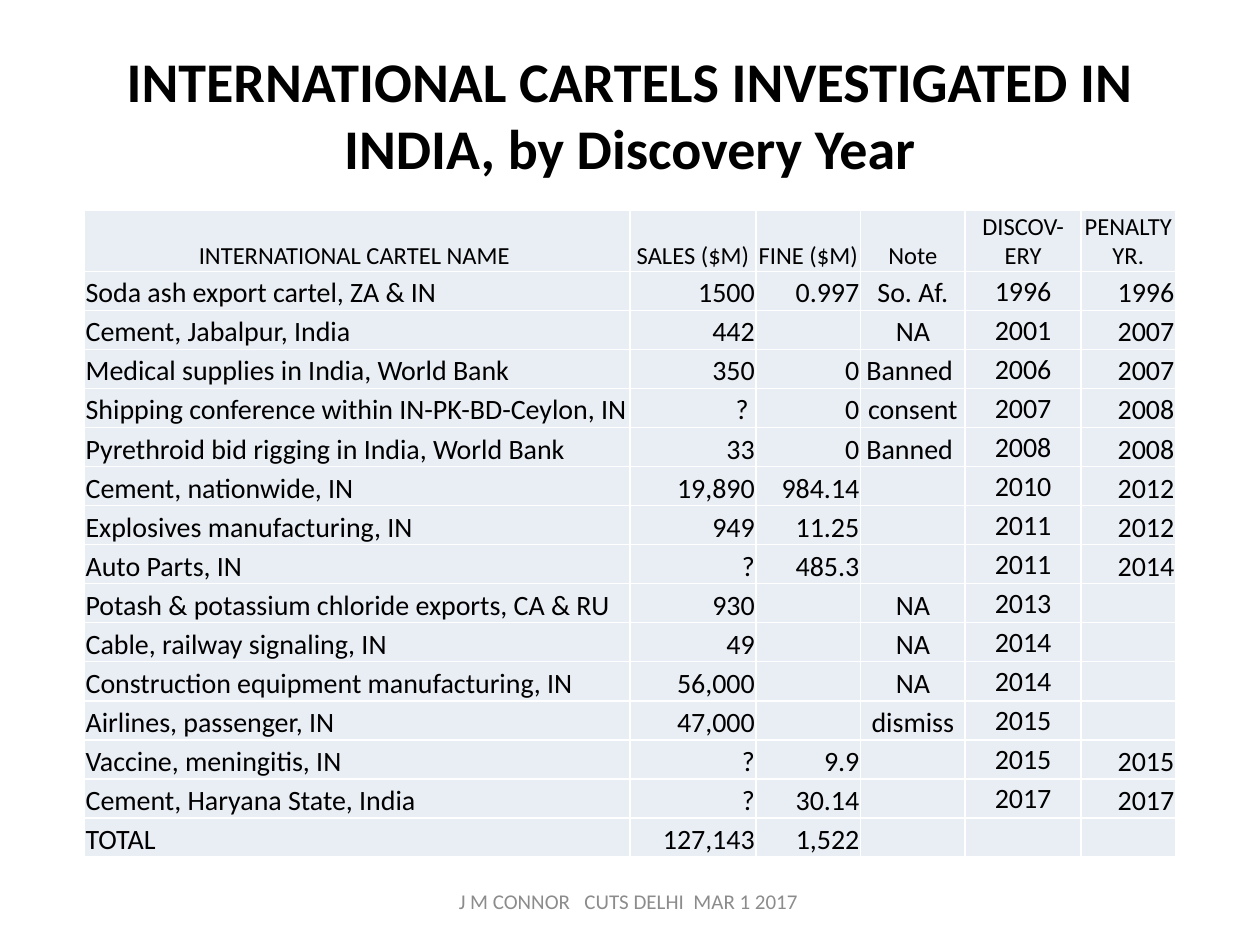
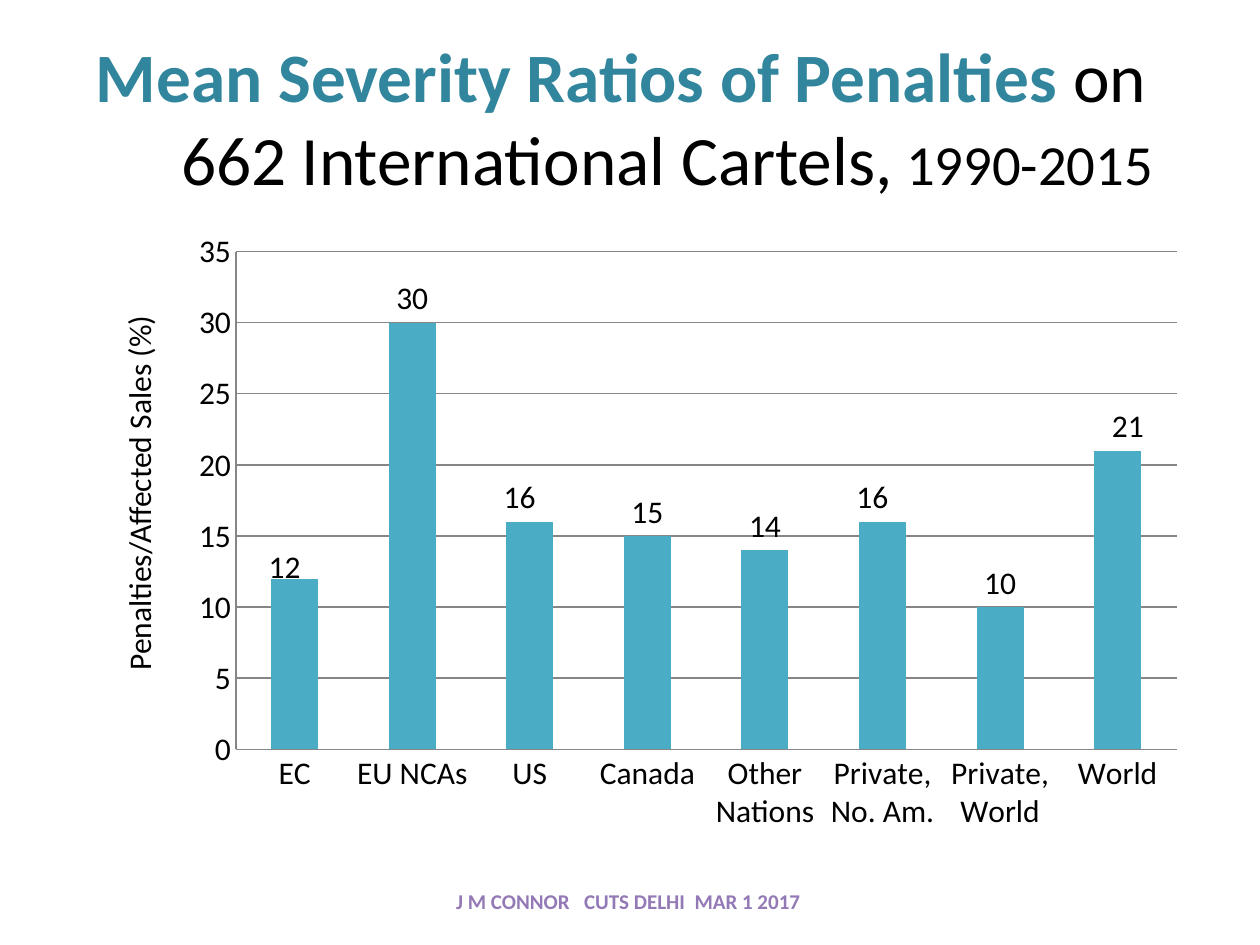
from dataclasses import dataclass

import pptx
import pptx.chart.data
import pptx.dml.color
import pptx.enum.chart
import pptx.enum.text
import pptx.oxml
import pptx.oxml.ns
import pptx.util
from lxml import etree

Inches = pptx.util.Inches
Pt = pptx.util.Pt
qn = pptx.oxml.ns.qn
ALIGN = pptx.enum.text.PP_ALIGN
ANCHOR = pptx.enum.text.MSO_ANCHOR

FONT = "Calibri"
COLORS = {
    "text": "000000",
    "cell": "E9EDF4",
    "border": "FFFFFF",
    "footer": "8C8C8C",
    "accent_footer": "9379B5",
    "highlight": "31859C",
    "bar": "4BACC6",
    "grid": "868686",
}


@dataclass(frozen=True)
class Run:
    text: str
    size: float
    color: str = "text"
    bold: bool = False
    spacing: float = 0


@dataclass(frozen=True)
class Box:
    left: float
    top: float
    width: float
    height: float

    def emu(self) -> tuple:
        return tuple(Inches(v) for v in (self.left, self.top, self.width, self.height))


@dataclass(frozen=True)
class Column:
    heading: str
    width: float
    align: ALIGN
    anchor: ANCHOR = ANCHOR.BOTTOM


@dataclass(frozen=True)
class Cartel:
    name: str
    sales: str
    fine: str = ""
    note: str = ""
    discovered: str = ""
    penalized: str = ""

    def values(self) -> tuple:
        return (self.name, self.sales, self.fine, self.note,
                self.discovered, self.penalized)


COLUMNS = [
    Column("INTERNATIONAL CARTEL NAME ", 4.33, ALIGN.LEFT),
    Column("SALES ($M)", 1, ALIGN.RIGHT),
    Column("FINE ($M)", 0.83, ALIGN.RIGHT),
    Column("Note", 0.83, ALIGN.CENTER),
    Column("DISCOV- ERY", 0.92, ALIGN.CENTER, ANCHOR.MIDDLE),
    Column("PENALTY YR.", 0.75, ALIGN.RIGHT),
]
CARTELS = [
    Cartel("Soda ash export cartel, ZA & IN", "1500", "0.997", "So. Af.", "1996", "1996"),
    Cartel("Cement, Jabalpur, India", "442", "", "NA", "2001", "2007"),
    Cartel("Medical supplies in India, World Bank", "350", "0", "Banned ", "2006", "2007"),
    Cartel("Shipping conference within IN-PK-BD-Ceylon, IN", "? ", "0", "consent",
           "2007", "2008"),
    Cartel("Pyrethroid bid rigging in India, World Bank", "33", "0", "Banned ",
           "2008", "2008"),
    Cartel("Cement, nationwide, IN", "19,890", "984.14", "", "2010", "2012"),
    Cartel("Explosives manufacturing, IN", "949", "11.25", "", "2011", "2012"),
    Cartel("Auto Parts, IN", "?", "485.3", "", "2011", "2014"),
    Cartel("Potash & potassium chloride exports, CA & RU", "930", "", "NA", "2013"),
    Cartel("Cable, railway signaling, IN", "49", "", "NA", "2014"),
    Cartel("Construction equipment manufacturing, IN", "56,000", "", "NA", "2014"),
    Cartel("Airlines, passenger, IN", "47,000", "", "dismiss", "2015"),
    Cartel("Vaccine, meningitis, IN", "?", "9.9", "", "2015", "2015"),
    Cartel("Cement, Haryana State, India", "?", "30.14", "", "2017", "2017"),
    Cartel("TOTAL", "127,143", "1,522"),
]
SEVERITY = {
    "EC": 12, "EU NCAs": 30, "US": 16, "Canada": 15, "Other Nations": 14,
    "Private, No. Am.": 16, "Private, World": 10, "World": 21,
}
# Label shifts as fractions of the chart's width and height
LABEL_SHIFTS = {0: (-0.01, 0.02), 2: (-0.01, 0), 5: (-0.01, 0), 7: (0.01, 0)}


def rgb(name: str) -> pptx.dml.color.RGBColor:
    return pptx.dml.color.RGBColor.from_string(COLORS[name])


def write(paragraph, runs: list[Run], align: ALIGN) -> None:
    paragraph.alignment = align
    for part in runs:
        run = paragraph.add_run()
        run.text = part.text
        run.font.name = FONT
        run.font.size = Pt(part.size)
        run.font.bold = part.bold
        run.font.color.rgb = rgb(part.color)
        if part.spacing:
            run.font._element.set("spc", str(int(part.spacing * 100)))


def add_title(slide, height: float, lines: list[list[Run]]):
    title = slide.shapes.title
    title.left, title.top, title.width, title.height = Box(0.5, 0.3, 9, height).emu()
    frame = title.text_frame
    frame.auto_size = pptx.enum.text.MSO_AUTO_SIZE.NONE
    frame.vertical_anchor = ANCHOR.MIDDLE
    for i, runs in enumerate(lines):
        paragraph = frame.add_paragraph() if i else frame.paragraphs[0]
        paragraph.space_before = Pt(0)
        write(paragraph, runs, ALIGN.CENTER)
    return frame


def add_text(slide, box: Box, runs: list[Run], align: ALIGN, anchor: ANCHOR):
    label = slide.shapes.add_textbox(*box.emu())
    label.text_frame.word_wrap = True
    label.text_frame.vertical_anchor = anchor
    write(label.text_frame.paragraphs[0], runs, align)
    return label


def add_footer(slide, color: str, bold: bool = False) -> None:
    pieces = [("J M CONNOR", 0), (" ", 5.4), ("CUTS DELHI", 0), (" ", 2.7),
              ("MAR 1 2017 ", 0)]
    runs = [Run(text, 12, color, bold, spacing) for text, spacing in pieces]
    add_text(slide, Box(3.42, 6.95, 3.17, 0.4), runs, ALIGN.CENTER, ANCHOR.MIDDLE)


def fill_cell(cell, text: str, size: float, align: ALIGN, anchor: ANCHOR) -> None:
    cell.margin_left = cell.margin_right = cell.margin_top = Inches(0.01)
    cell.margin_bottom = 0
    cell.vertical_anchor = anchor
    paragraph = cell.text_frame.paragraphs[0]
    if text:
        write(paragraph, [Run(text, size)], align)
    else:
        etree.SubElement(paragraph._p, qn("a:endParaRPr"), sz=str(int(size * 100)))
    # Borders come before the fill in the cell properties
    properties = cell._tc.get_or_add_tcPr()
    for side in ("lnL", "lnR", "lnT", "lnB"):
        line = etree.SubElement(properties, qn(f"a:{side}"), w=str(Pt(1)))
        solid = etree.SubElement(line, qn("a:solidFill"))
        etree.SubElement(solid, qn("a:srgbClr"), val=COLORS["border"])
    cell.fill.solid()
    cell.fill.fore_color.rgb = rgb("cell")


def add_cartel_table(slide) -> None:
    table = slide.shapes.add_table(
        len(CARTELS) + 1, len(COLUMNS), *Box(0.67, 1.67, 8.66, 5.16).emu()).table
    table.first_row = table.horz_banding = False
    for row in table.rows:
        row.height = Inches(0.31)
    table.rows[0].height = Inches(0.48)
    for c, column in enumerate(COLUMNS):
        table.columns[c].width = Inches(column.width)
        fill_cell(table.cell(0, c), column.heading, 14, ALIGN.CENTER, ANCHOR.BOTTOM)
        for r, cartel in enumerate(CARTELS, 1):
            fill_cell(table.cell(r, c), cartel.values()[c], 16, column.align, column.anchor)


def manual_layout(**settings) -> etree._Element:
    layout = pptx.oxml.parse_xml(
        f'<c:layout xmlns:c="{pptx.oxml.ns.nsuri("c")}"><c:manualLayout/></c:layout>')
    for key, value in settings.items():
        etree.SubElement(layout[0], qn(f"c:{key}"), val=str(value))
    return layout


def add_severity_chart(slide) -> None:
    data = pptx.chart.data.CategoryChartData(number_format="0")
    data.categories = list(SEVERITY)
    data.add_series("Series 1", list(SEVERITY.values()))
    chart = slide.shapes.add_chart(
        pptx.enum.chart.XL_CHART_TYPE.COLUMN_CLUSTERED,
        *Box(1.42, 1.75, 8.08, 4.95).emu(), data).chart
    chart.has_legend = chart.has_title = False
    chart.font.name, chart.font.size = FONT, Pt(18)
    chart.font.color.rgb = rgb("text")

    # Axes and gridlines
    value_axis = chart.value_axis
    value_axis.minimum_scale, value_axis.maximum_scale = 0, 35
    value_axis.major_unit = 5
    value_axis.has_major_gridlines = True
    for axis in (value_axis, chart.category_axis):
        axis.major_tick_mark = pptx.enum.chart.XL_TICK_MARK.NONE
    for lined in (value_axis, chart.category_axis, value_axis.major_gridlines):
        lined.format.line.color.rgb = rgb("grid")
        lined.format.line.width = Pt(0.75)

    # Bars and their labels
    plot = chart.plots[0]
    plot.gap_width = 150
    plot.vary_by_categories = False
    bars = plot.series[0]
    bars.format.fill.solid()
    bars.format.fill.fore_color.rgb = rgb("bar")
    outside = pptx.enum.chart.XL_LABEL_POSITION.OUTSIDE_END
    labels = bars.data_labels
    labels.show_value = True
    labels.number_format, labels.number_format_is_linked = "0", False
    labels.position = outside
    labels.font.name, labels.font.size = FONT, Pt(18)
    labels.font.color.rgb = rgb("text")
    for index, (x, y) in LABEL_SHIFTS.items():
        label = bars.points[index].data_label
        label.font.size = Pt(18)
        label.position = outside
    for label in labels._element.findall(qn("c:dLbl")):
        index = label.find(qn("c:idx"))
        x, y = LABEL_SHIFTS[int(index.get("val"))]
        index.addnext(manual_layout(x=x, y=y))

    # Plot area
    plot_area = chart._chartSpace.chart.plotArea
    for layout in plot_area.findall(qn("c:layout")):
        plot_area.remove(layout)
    plot_area.insert(0, manual_layout(layoutTarget="inner", xMode="edge", yMode="edge",
                                      x=0.056, y=0.05, w=0.924, h=0.798))


def main() -> None:
    deck = pptx.Presentation()
    deck.slide_width, deck.slide_height = Inches(10), Inches(7.5)
    title_only = deck.slide_layouts[5]

    # Cartels by discovery year
    cartels = deck.slides.add_slide(title_only)
    heading = "INTERNATIONAL CARTELS INVESTIGATED IN INDIA, by Discovery Year"
    add_title(cartels, 1.2, [[Run(heading, 32, bold=True)]])
    add_cartel_table(cartels)
    add_footer(cartels, "footer")

    # Severity of penalties
    severity = deck.slides.add_slide(title_only)
    frame = add_title(severity, 1.25, [
        [Run("Mean Severity Ratios of Penalties ", 39.6, "highlight", True),
         Run("on", 39.6)],
        [Run("662 International Cartels,", 39.6), Run(" 1990-2015", 32.4)],
    ])
    for paragraph, side, indent in zip(frame.paragraphs, ("marR", "marL"), (0.14, 0.73)):
        paragraph._p.get_or_add_pPr().set(side, str(Inches(indent)))
    add_severity_chart(severity)
    axis_caption = add_text(severity, Box(-0.37, 3.44, 3.25, 0.71),
                            [Run("Penalties/Affected Sales (%)", 18)],
                            ALIGN.LEFT, ANCHOR.TOP)
    axis_caption.rotation = 270
    add_footer(severity, "accent_footer", bold=True)

    deck.save("out.pptx")


if __name__ == "__main__":
    main()
